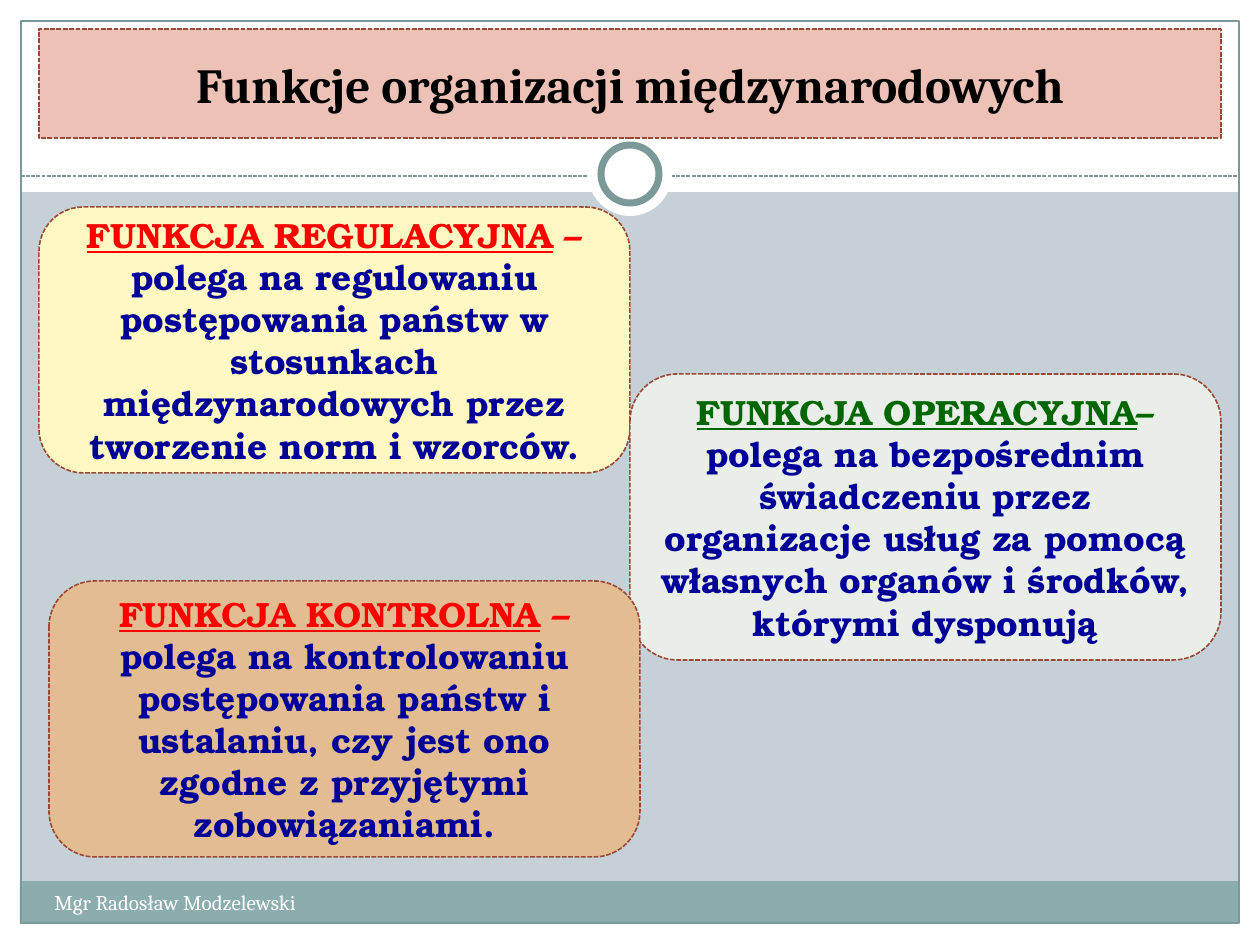
"""Build the slide on the functions of international organisations."""
from dataclasses import dataclass
from typing import Optional

from lxml import etree
from pptx import Presentation
from pptx.dml.color import RGBColor
from pptx.enum.dml import MSO_LINE
from pptx.enum.shapes import MSO_CONNECTOR, MSO_SHAPE
from pptx.enum.text import MSO_ANCHOR, PP_ALIGN
from pptx.oxml.ns import qn
from pptx.util import Emu, Pt

RECT = MSO_SHAPE.RECTANGLE
ROUNDED = MSO_SHAPE.ROUNDED_RECTANGLE
OVAL = MSO_SHAPE.OVAL
STRAIGHT = MSO_CONNECTOR.STRAIGHT
DASHED = MSO_LINE.SQUARE_DOT
MIDDLE = MSO_ANCHOR.MIDDLE
CENTER = PP_ALIGN.CENTER

WHITE = RGBColor(0xFF, 0xFF, 0xFF)
BLACK = RGBColor(0x00, 0x00, 0x00)
BACKDROP = RGBColor(0xC5, 0xD1, 0xD7)
TEAL = RGBColor(0x8C, 0xAD, 0xAE)
DARK_TEAL = RGBColor(0x7C, 0x99, 0x9A)
BRICK = RGBColor(0x9B, 0x49, 0x36)
PINK = RGBColor(0xED, 0xC1, 0xB6)
CREAM = RGBColor(0xFF, 0xF8, 0xC2)
MINT = RGBColor(0xE9, 0xEF, 0xE8)
TAN = RGBColor(0xE3, 0xBC, 0x92)
RED = RGBColor(0xFF, 0x00, 0x00)
GREEN = RGBColor(0x00, 0x66, 0x00)
NAVY = RGBColor(0x00, 0x00, 0x99)

PX_PER_INCH = 126
WIDTH, HEIGHT = 1260, 945
MARGIN = 21
DIVIDER_Y = 176
HEADING_FONT = "Cambria"
CARD_FONT = "TeX Gyre Bonum"
CARD_WIDTH = 591


@dataclass(frozen=True)
class Block:
    left: int
    top: int
    width: int
    height: int
    fill: Optional[RGBColor] = None
    line: Optional[RGBColor] = None
    weight: float = 0.75
    preset: MSO_SHAPE = RECT
    dash: Optional[MSO_LINE] = None


@dataclass(frozen=True)
class Card:
    left: int
    top: int
    height: int
    fill: RGBColor
    accent: RGBColor
    name: str
    dash: str
    description: str


BACKGROUND = [
    Block(0, HEIGHT - MARGIN, WIDTH, MARGIN, WHITE),
    Block(0, 0, WIDTH, 192, WHITE),
    Block(0, 0, MARGIN, HEIGHT, WHITE),
    Block(WIDTH - MARGIN, 0, MARGIN, HEIGHT, WHITE),
    Block(20, 881, 1218, 43, TEAL),
    Block(MARGIN, MARGIN, WIDTH - 2 * MARGIN, 902, line=DARK_TEAL),
]
RING = [
    Block(588, 132, 84, 84, WHITE, preset=OVAL),
    Block(601, 145, 58, 58, WHITE, DARK_TEAL, 4, OVAL),
]
TITLE = Block(39, 29, 1182, 109, PINK, BRICK, 0.9, RECT, DASHED)
CARDS = [
    Card(39, 207, 266, CREAM, RED, "FUNKCJA REGULACYJNA", " – ",
         "polega na regulowaniu postępowania państw w stosunkach "
         "międzynarodowych przez tworzenie norm i wzorców."),
    Card(630, 374, 286, MINT, GREEN, "FUNKCJA OPERACYJNA", "– ",
         "polega na bezpośrednim świadczeniu przez organizacje usług "
         "za pomocą własnych organów i środków, którymi dysponują"),
    Card(49, 581, 276, TAN, RED, "FUNKCJA KONTROLNA", " – ",
         "polega na kontrolowaniu postępowania państw i ustalaniu, "
         "czy jest ono zgodne z przyjętymi zobowiązaniami."),
]


def px(length: int) -> Emu:
    """Turn px into EMU."""
    return Emu(round(length * 914400 / PX_PER_INCH))


def draw_block(slide, block: Block):
    """Draw a preset shape with its fill and outline."""
    shape = slide.shapes.add_shape(block.preset, px(block.left), px(block.top),
                                   px(block.width), px(block.height))
    shape.shadow.inherit = False
    if block.fill is None:
        shape.fill.background()
    else:
        shape.fill.solid()
        shape.fill.fore_color.rgb = block.fill
    if block.line is None:
        shape.line.fill.background()
    else:
        shape.line.color.rgb = block.line
        shape.line.width = Pt(block.weight)
        if block.dash is not None:
            shape.line.dash_style = block.dash
    return shape


def draw_divider(slide) -> None:
    """Draw the dashed line under the title."""
    divider = slide.shapes.add_connector(STRAIGHT, px(MARGIN), px(DIVIDER_Y),
                                         px(WIDTH - MARGIN), px(DIVIDER_Y))
    divider.line.color.rgb = DARK_TEAL
    divider.line.width = Pt(0.75)
    divider.line.dash_style = DASHED
    etree.SubElement(divider._element.spPr, qn("a:effectLst"))


def set_font(paragraph, name: str, size: int, bold: bool = False) -> None:
    """Set the font shared by a paragraph's runs."""
    paragraph.font.name = name
    paragraph.font.size = Pt(size)
    paragraph.font.bold = bold


def centred_paragraph(shape):
    """Prepare the shape's text frame and return its paragraph."""
    frame = shape.text_frame
    frame.word_wrap = True
    frame.vertical_anchor = MIDDLE
    paragraph = frame.paragraphs[0]
    paragraph.alignment = CENTER
    return paragraph


def draw_title(slide) -> None:
    """Draw the title band."""
    heading = centred_paragraph(draw_block(slide, TITLE))
    heading.text = "Funkcje organizacji międzynarodowych"
    set_font(heading, HEADING_FONT, 28, bold=True)
    heading.font.color.rgb = BLACK


def draw_footer(slide) -> None:
    """Write the author's name in the bottom band."""
    footer = slide.shapes.add_textbox(px(42), px(883), px(494), px(50))
    footer.text_frame.word_wrap = True
    author = footer.text_frame.paragraphs[0]
    author.text = "Mgr Radosław Modzelewski"
    set_font(author, HEADING_FONT, 12)
    author.font.color.rgb = WHITE


def draw_card(slide, card: Card) -> None:
    """Draw one function with its underlined name and description."""
    outline = Block(card.left, card.top, CARD_WIDTH, card.height, card.fill,
                    BRICK, 0.9, ROUNDED, DASHED)
    paragraph = centred_paragraph(draw_block(slide, outline))
    set_font(paragraph, CARD_FONT, 20, bold=True)
    for text, color, underline in ((card.name, card.accent, True),
                                   (card.dash, card.accent, False),
                                   (card.description, NAVY, False)):
        run = paragraph.add_run()
        run.text = text
        run.font.color.rgb = color
        run.font.underline = underline


def main() -> None:
    """Build and save the slide."""
    deck = Presentation()
    deck.slide_width, deck.slide_height = px(WIDTH), px(HEIGHT)
    slide = deck.slides.add_slide(deck.slide_layouts[6])
    slide.background.fill.solid()
    slide.background.fill.fore_color.rgb = BACKDROP
    for block in BACKGROUND:
        draw_block(slide, block)
    draw_divider(slide)
    for block in RING:
        draw_block(slide, block)
    draw_footer(slide)
    draw_title(slide)
    for card in CARDS:
        draw_card(slide, card)
    deck.save("out.pptx")


if __name__ == "__main__":
    main()
